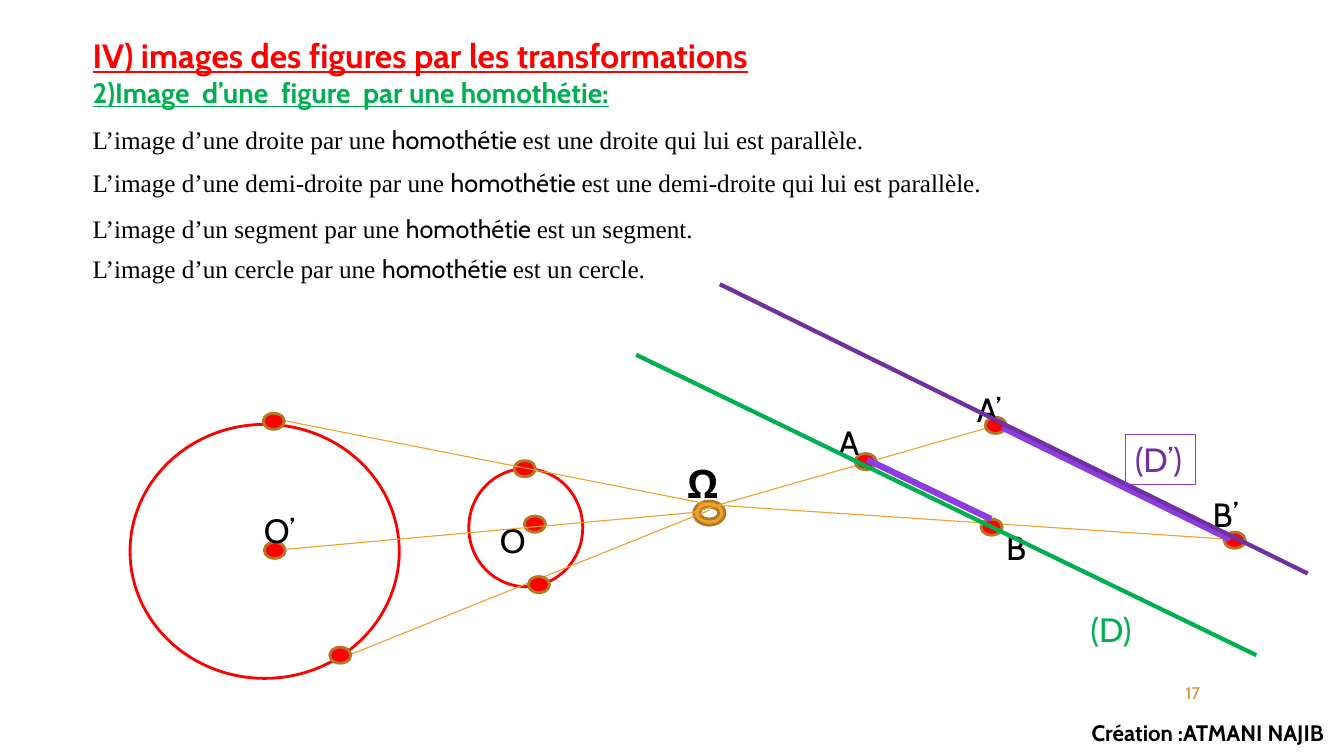
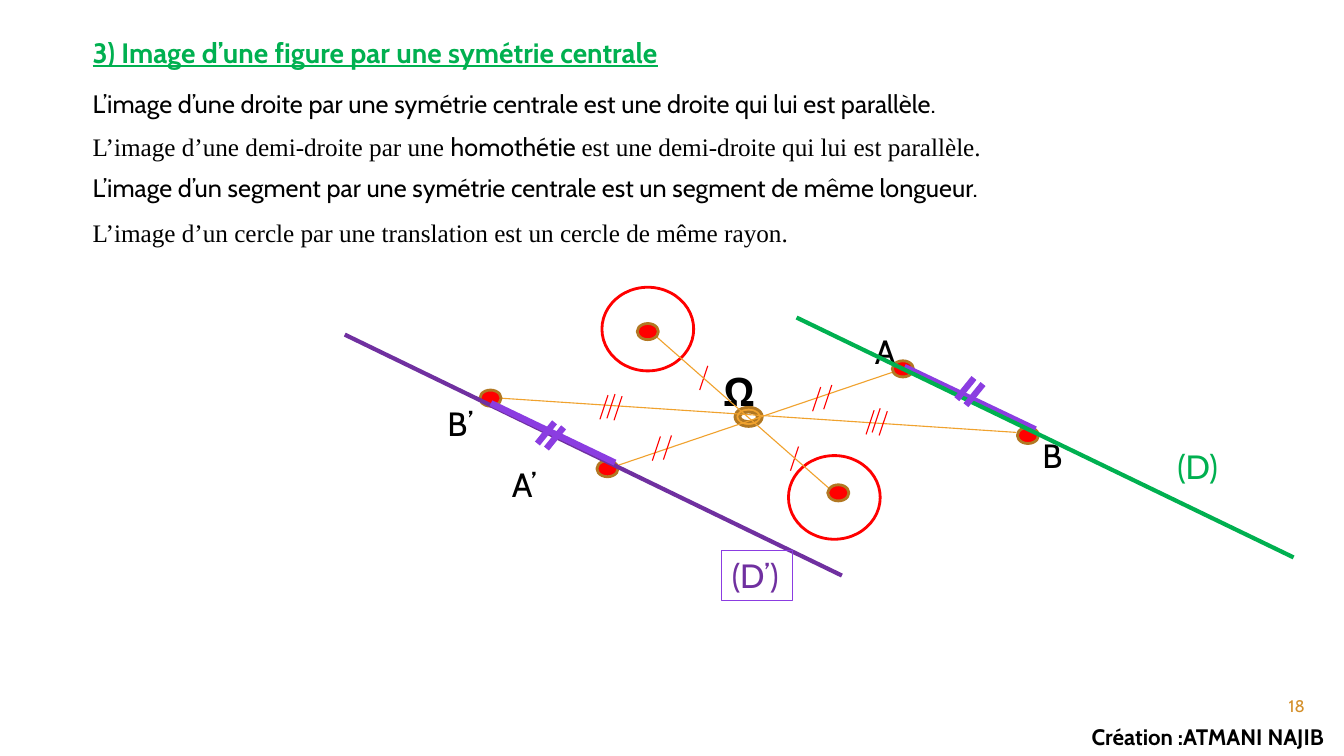
"""Build two geometry slides on images of figures by homothety and central symmetry."""
from pptx import Presentation
from pptx.dml.color import RGBColor
from pptx.enum.shapes import MSO_CONNECTOR, MSO_SHAPE
from pptx.enum.text import PP_ALIGN
from pptx.oxml.ns import qn
from pptx.util import Inches, Pt
from lxml.etree import SubElement

CELL = Inches(0.1)
COLUMNS, ROWS = 133.3, 75
MARGIN = 8.2
RED, GREEN, PURPLE, VIOLET = "FF0000", "00B050", "7030A0", "8B3DE1"
BLACK, GOLD, BROWN, ORANGE = "000000", "F0A22E", "B27822", "D48F29"

TEXTS = {
    "chapter": (RED, {"name": "Cabin", "size": Pt(24), "bold": True, "underline": True}),
    "section": (GREEN, {"name": "Cabin", "size": Pt(20), "bold": True, "underline": True}),
    "serif": (BLACK, {"name": "Times New Roman", "size": Pt(18)}),
    "sans": (BLACK, {"name": "Cabin", "size": Pt(18)}),
    "number": (ORANGE, {"name": "Cabin", "size": Pt(12)}),
    "credit": (BLACK, {"name": "Cabin", "size": Pt(16), "bold": True}),
    "origin": (BLACK, {"name": "Cabin", "size": Pt(28), "bold": True}),
    "point": (BLACK, {"name": "Cabin", "size": Pt(24)}),
    "green name": (GREEN, {"name": "Cabin", "size": Pt(24)}),
    "framed name": (PURPLE, {"name": "Cabin", "size": Pt(24)}),
}
LINES = {
    "ray": (GOLD, 0.79),
    "tick": (RED, 0.79),
    "segment": (VIOLET, 4.5),
    "green line": (GREEN, 3),
    "purple line": (PURPLE, 3),
}
SHAPES = {
    "dot": (MSO_SHAPE.FLOWCHART_CONNECTOR, RED, BROWN),
    "center": (MSO_SHAPE.DONUT, GOLD, BROWN),
    "circle": (MSO_SHAPE.OVAL, None, RED),
}
DOT_SIZE = (2.1, 1.6)
LABEL_WIDTHS = {1: 4.4, 2: 5.3, 3: 7, 4: 7}

HALF_LINE = [
    ("L’image d’une demi-droite par une ", "serif"),
    ("homothétie ", "sans"),
    ("est une demi-droite qui lui est parallèle.", "serif"),
]

PAGES = [
    {
        "titles": [
            [("IV) images des figures par les transformations", "chapter")],
            [("2)Image  d’une  figure  par une homothétie:", "section")],
        ],
        "sentences": [
            (11.4, 1.15, [("L’image d’une droite par une ", "serif"), ("homothétie ", "sans"),
                          ("est une droite qui lui est parallèle.", "serif")]),
            (15.7, 1.15, HALF_LINE),
            (20.2, 1.15, [("L’image d’un segment par une ", "serif"), ("homothétie ", "sans"),
                          ("est un segment.", "serif")]),
            (24.2, 1.15, [("L’image d’un cercle par une ", "serif"), ("homothétie ", "sans"),
                          ("est un cercle.", "serif")]),
        ],
        "number": ("17", 108.9, 67.2),
        "credit top": 70.9,
        "figure": [
            ("center", 68.8, 49.7, 3.1, 2.4),
            ("ray", 68.8, 50.8, 98.8, 42.2),
            ("dot", 84.8, 45),
            ("origin", "Ω", 67.2, 45.1),
            ("point", "A", 82.2, 41.4),
            ("dot", 97.7, 41.4),
            ("point", "A’", 95.9, 38.1),
            ("ray", 69.3, 50, 121.9, 53.5),
            ("dot", 97.3, 51.5),
            ("point", "B", 98.8, 51.8),
            ("dot", 121.4, 52.8),
            ("point", "B’", 119.3, 48.5),
            ("segment", 86, 45.6, 98.3, 51.5),
            ("segment", 99.4, 42.4, 122, 53.5),
            ("green line", 63.1, 35.2, 124.6, 65),
            ("purple line", 71.4, 28.2, 129.7, 56.9),
            ("green name", "(D)", 107.2, 59.9),
            ("framed name", "(D’)", 111.6, 43.1),
            ("circle", 46.5, 46.5, 11.3, 11.7),
            ("circle", 12.9, 42.1, 26.7, 25.2),
            ("dot", 51, 45.7),
            ("ray", 26.5, 41.4, 70.7, 50.1),
            ("dot", 26.1, 41),
            ("ray", 34.6, 65, 70.4, 50.6),
            ("dot", 52.4, 57.2),
            ("dot", 32.7, 64.2),
            ("dot", 52, 51.2),
            ("point", "O", 48.6, 51.1),
            ("dot", 26.2, 53.8),
            ("point", "O’", 25.2, 50.1),
            ("ray", 28.3, 54.5, 69.3, 50.8),
        ],
    },
    {
        "titles": [[("3) Image d’une figure par une symétrie centrale", "section")]],
        "sentences": [
            (7.8, 1.15, [("L’image d’une droite par une symétrie centrale "
                          "est une droite qui lui est parallèle.", "sans")]),
            (12.1, 1.15, HALF_LINE),
            (16.6, 1, [("L’image d’un segment par une symétrie centrale "
                        "est un segment de même longueur.", "sans")]),
            (20.6, 1.15, [("L’image d’un cercle par une translation "
                           "est un cercle de même rayon.", "serif")]),
        ],
        "number": ("18", 119.3, 68.5),
        "credit top": 71.2,
        "figure": [
            ("center", 72.9, 40.4, 2.7, 1.9),
            ("ray", 60.6, 46.4, 89.5, 36.6),
            ("dot", 88.5, 35.8),
            ("origin", "Ω", 70.8, 35.9),
            ("point", "A", 85.8, 32.3),
            ("dot", 59.2, 45.7),
            ("point", "A’", 49.8, 45.5),
            ("ray", 48.1, 39.4, 100.8, 42.9),
            ("dot", 100.9, 42.4),
            ("point", "B", 102.4, 42.7),
            ("dot", 47.6, 38.7),
            ("point", "B’", 43.4, 39.5),
            *[("tick", x, y, x - 0.8, y + 2.4) for x, y in (
                (81.4, 38.4), (82.5, 38.2), (65.5, 43.3), (66.6, 43.2),
                (86.7, 40.7), (87.3, 40.5), (88, 40.8),
                (60.3, 39.2), (61, 39.1), (61.7, 39.3),
                (70.2, 36.3), (79.2, 44.3))],
            ("segment", 89.7, 36.4, 102.7, 42.6),
            ("green line", 79, 31.5, 128.3, 55.3),
            ("purple line", 34.2, 33.2, 83.5, 57.1),
            ("segment", 48.7, 40, 61, 45.9),
            ("green name", "(D)", 115.8, 43.7),
            ("framed name", "(D’)", 71.6, 54.6),
            *[("segment", x, y, x + 1.7, y - 2.1) for x, y in (
                (94.9, 39.6), (95.8, 40.2), (53.3, 44), (54.2, 44.5))],
            ("circle", 78.2, 45.2, 9.1, 8.3),
            ("circle", 59.7, 28.5, 9.1, 8.3),
            ("ray", 64.3, 32.7, 83.2, 49.3),
            ("dot", 82.1, 48.1),
            ("dot", 63.2, 32.1),
        ],
    },
]


def paint(fill, color):
    """Fill with a hex colour, or leave empty when there is none."""
    if color is None:
        fill.background()
    else:
        fill.solid()
        fill.fore_color.rgb = RGBColor.from_string(color)


def write(page, place, paragraphs, **formats):
    """Add a text box at a grid place, each paragraph a list of (text, style)."""
    box = page.shapes.add_textbox(*[round(length * CELL) for length in place])
    box.text_frame.word_wrap = True
    for index, runs in enumerate(paragraphs):
        para = box.text_frame.add_paragraph() if index else box.text_frame.paragraphs[0]
        for name, value in formats.items():
            setattr(para, name, value)
        for text, style in runs:
            span = para.add_run()
            span.text = text
            color, values = TEXTS[style]
            for name, value in values.items():
                setattr(span.font, name, value)
            paint(span.font.fill, color)
    return box


deck = Presentation()
deck.slide_width, deck.slide_height = round(COLUMNS * CELL), ROWS * CELL

for content in PAGES:
    page = deck.slides.add_slide(deck.slide_layouts[6])
    titles = content["titles"]
    write(page, (MARGIN, 3, 100.6, 0.4 + 4 * len(titles)), titles)
    for top, spacing, runs in content["sentences"]:
        write(page, (MARGIN, top, 111.2, 4.3), [runs], line_spacing=spacing)
    number, left, top = content["number"]
    write(page, (left, top, 11.1, 2.7), [[(number, "number")]], alignment=PP_ALIGN.RIGHT)

    for kind, *place in content["figure"]:
        if kind in TEXTS:
            text, left, top = place
            box = write(page, (left, top, LABEL_WIDTHS[len(text)], 5), [[(text, kind)]])
            if kind == "framed name":
                paint(box.line.fill, VIOLET)
                box.line.width = Pt(0.75)
            continue
        if kind == "dot":
            place += DOT_SIZE
        lengths = [round(length * CELL) for length in place]
        if kind in LINES:
            color, width = LINES[kind]
            line = page.shapes.add_connector(MSO_CONNECTOR.STRAIGHT, *lengths)
            paint(line.line.fill, color)
            line.line.width = Pt(width)
            SubElement(line.element.spPr, qn("a:effectLst"))
        else:
            preset, fill, outline = SHAPES[kind]
            shape = page.shapes.add_shape(preset, *lengths)
            shape.shadow.inherit = False
            paint(shape.fill, fill)
            paint(shape.line.fill, outline)
            shape.line.width = Pt(2)

    write(page, (103.1, content["credit top"], 29.2, 3.7),
          [[("Création :ATMANI NAJIB", "credit")]], alignment=PP_ALIGN.RIGHT)

deck.save("out.pptx")
